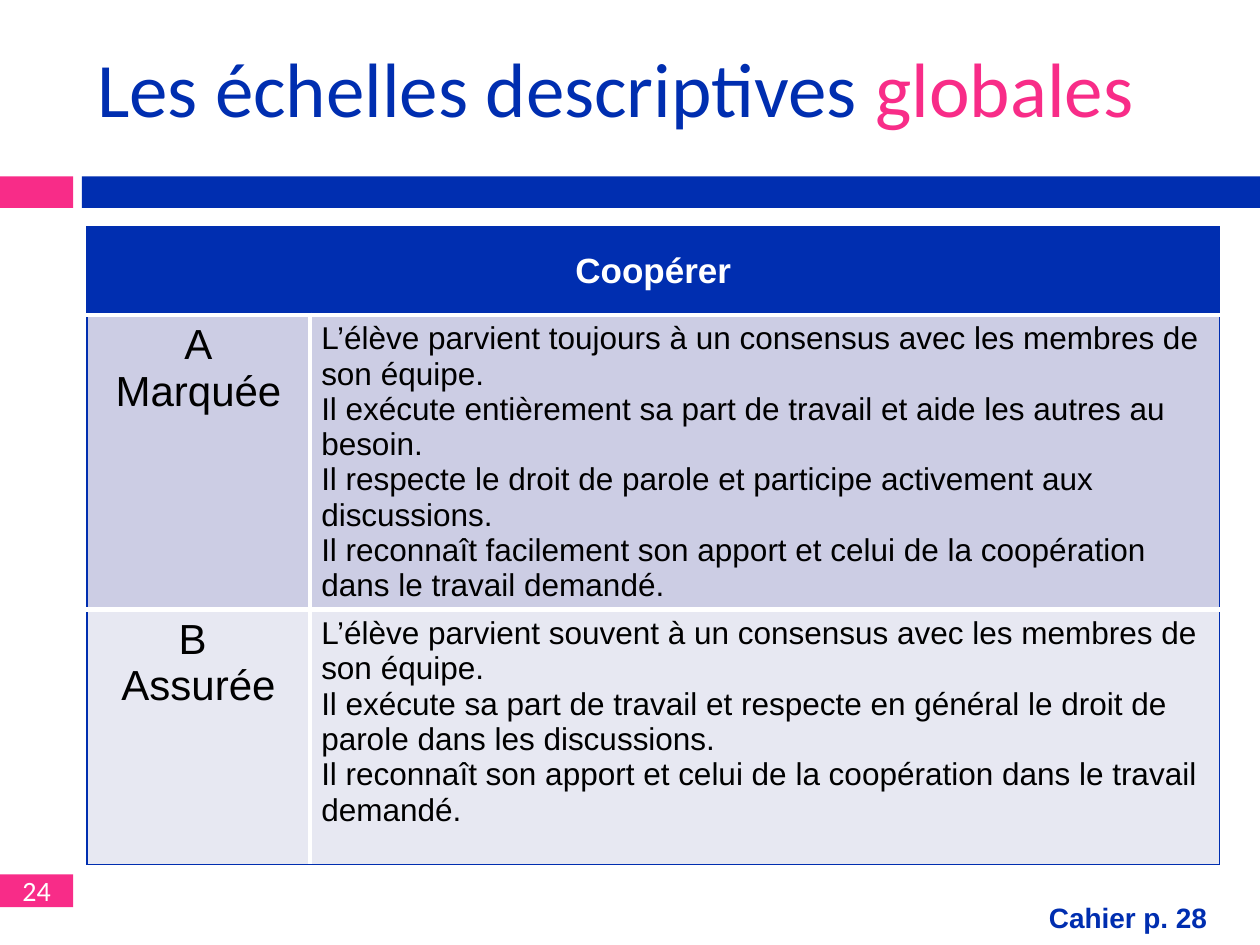
from lxml.etree import SubElement
from pptx import Presentation
from pptx.dml.color import RGBColor
from pptx.enum.shapes import MSO_SHAPE as Shape
from pptx.enum.text import MSO_ANCHOR as Anchor, PP_ALIGN as Align
from pptx.oxml.ns import qn
from pptx.util import Inches, Pt

COLORS = {"blue": "002EB0", "pink": "F82C88", "white": "FFFFFF", "black": "000000",
          "lavender": "CCCDE4", "pale": "E7E8F2"}
TITLE = [("Les échelles descriptives ", "blue"), ("globales", "pink")]
SKILL = "Coopérer"
LEVELS = [
    (["A", "Marquée"], [
        "L’élève parvient toujours à un consensus avec les membres de son équipe.",
        "Il exécute entièrement sa part de travail et aide les autres au besoin.",
        "Il respecte le droit de parole et participe activement aux discussions.",
        "Il reconnaît facilement son apport et celui de la coopération dans le travail demandé.",
    ], "lavender"),
    (["B ", "Assurée"], [
        "L’élève parvient souvent à un consensus avec les membres de son équipe.",
        "Il exécute sa part de travail et respecte en général le droit de parole dans les discussions.",
        "Il reconnaît son apport et celui de la coopération dans le travail demandé.",
    ], "pale"),
]
PAGE_NUMBER = "24"
REFERENCE = "Cahier p. 28"

WIDTH, HEIGHT = 10, 7.5
TAB, BAR_LEFT, BAR_TOP, BAR_HEIGHT = 0.58, 0.65, 1.4, 0.25
COLUMNS = [1.77, 7.22]
ROWS = [0.7, 2.33, 2.02]
TABLE_LEFT, TABLE_TOP = 0.69, 1.8
OUTER, INNER = ("blue", 1), ("white", 3)


def rgb(name):
    return RGBColor.from_string(COLORS[name])


def write(paragraph, text, size, color, font="Arial", bold=False):
    run = paragraph.add_run()
    run.text = text
    run.font.size, run.font.name, run.font.bold = Pt(size), font, bold
    run.font.color.rgb = rgb(color)


def add_block(slide, left, top, width, height, color):
    block = slide.shapes.add_shape(Shape.RECTANGLE, *map(Inches, (left, top, width, height)))
    block.shadow.inherit = False
    block.fill.solid()
    block.fill.fore_color.rgb = rgb(color)
    block.line.fill.background()
    return block


def fill_cell(cell, lines, size, color, fill, align=Align.LEFT, bold=False):
    cell.fill.solid()
    cell.fill.fore_color.rgb = rgb(fill)
    cell.margin_left = cell.margin_right = Inches(0.09)
    cell.margin_top = cell.margin_bottom = Inches(0.05)
    frame = cell.text_frame
    for index, line in enumerate(lines):
        paragraph = frame.add_paragraph() if index else frame.paragraphs[0]
        paragraph.alignment = align
        write(paragraph, line, size, color, bold=bold)


def set_borders(cell, sides):
    properties = cell._tc.get_or_add_tcPr()
    for position, (side, (color, width)) in enumerate(zip("LRTB", sides)):
        line = SubElement(properties, qn(f"a:ln{side}"), w=str(Pt(width)))
        SubElement(SubElement(line, qn("a:solidFill")), qn("a:srgbClr"), val=COLORS[color])
        properties.insert(position, line)


def add_scale(slide):
    table = slide.shapes.add_table(
        len(ROWS), len(COLUMNS), Inches(TABLE_LEFT), Inches(TABLE_TOP),
        Inches(sum(COLUMNS)), Inches(sum(ROWS))).table
    for column, width in zip(table.columns, COLUMNS):
        column.width = Inches(width)
    for row, height in zip(table.rows, ROWS):
        row.height = Inches(height)
    header = table.cell(0, 0)
    header.merge(table.cell(0, 1))
    fill_cell(header, [SKILL], 20, "white", "blue", Align.CENTER, True)
    header.vertical_anchor = Anchor.MIDDLE
    for row, (level, criteria, fill) in enumerate(LEVELS, 1):
        fill_cell(table.cell(row, 0), level, 24, "black", fill, Align.CENTER)
        fill_cell(table.cell(row, 1), criteria, 18, "black", fill)
    last = len(ROWS) - 1
    for row in range(len(ROWS)):
        for column in range(len(COLUMNS)):
            set_borders(table.cell(row, column), [
                OUTER if column == 0 else INNER,
                OUTER if column == 1 or row == 0 else INNER,
                OUTER if row == 0 else INNER,
                OUTER if row == last else INNER])


def main():
    deck = Presentation()
    deck.slide_width, deck.slide_height = Inches(WIDTH), Inches(HEIGHT)
    slide = deck.slides.add_slide(deck.slide_layouts[5])

    add_block(slide, 0, BAR_TOP, TAB, BAR_HEIGHT, "pink")
    add_block(slide, BAR_LEFT, BAR_TOP, WIDTH - BAR_LEFT, BAR_HEIGHT, "blue")

    number = add_block(slide, 0, 6.94, TAB, 0.26, "pink").text_frame
    number.margin_top = number.margin_bottom = 0
    number.vertical_anchor = Anchor.MIDDLE
    number.paragraphs[0].alignment = Align.CENTER
    write(number.paragraphs[0], PAGE_NUMBER, 16, "white", "Calibri")

    title = slide.shapes.title
    title.left, title.top, title.width, title.height = map(Inches, (0.67, 0.1, 8.92, 1.17))
    title.text_frame.vertical_anchor = Anchor.MIDDLE
    heading = title.text_frame.paragraphs[0]
    heading.alignment = Align.LEFT
    for text, color in TITLE:
        write(heading, text, 44, color, "Calibri")

    add_scale(slide)

    reference = add_block(slide, 7.5, 7.1, 2.18, 0.37, "white").text_frame
    reference.vertical_anchor = Anchor.TOP
    reference.paragraphs[0].alignment = Align.RIGHT
    write(reference.paragraphs[0], REFERENCE, 16, "blue", bold=True)

    deck.save("out.pptx")


if __name__ == "__main__":
    main()
